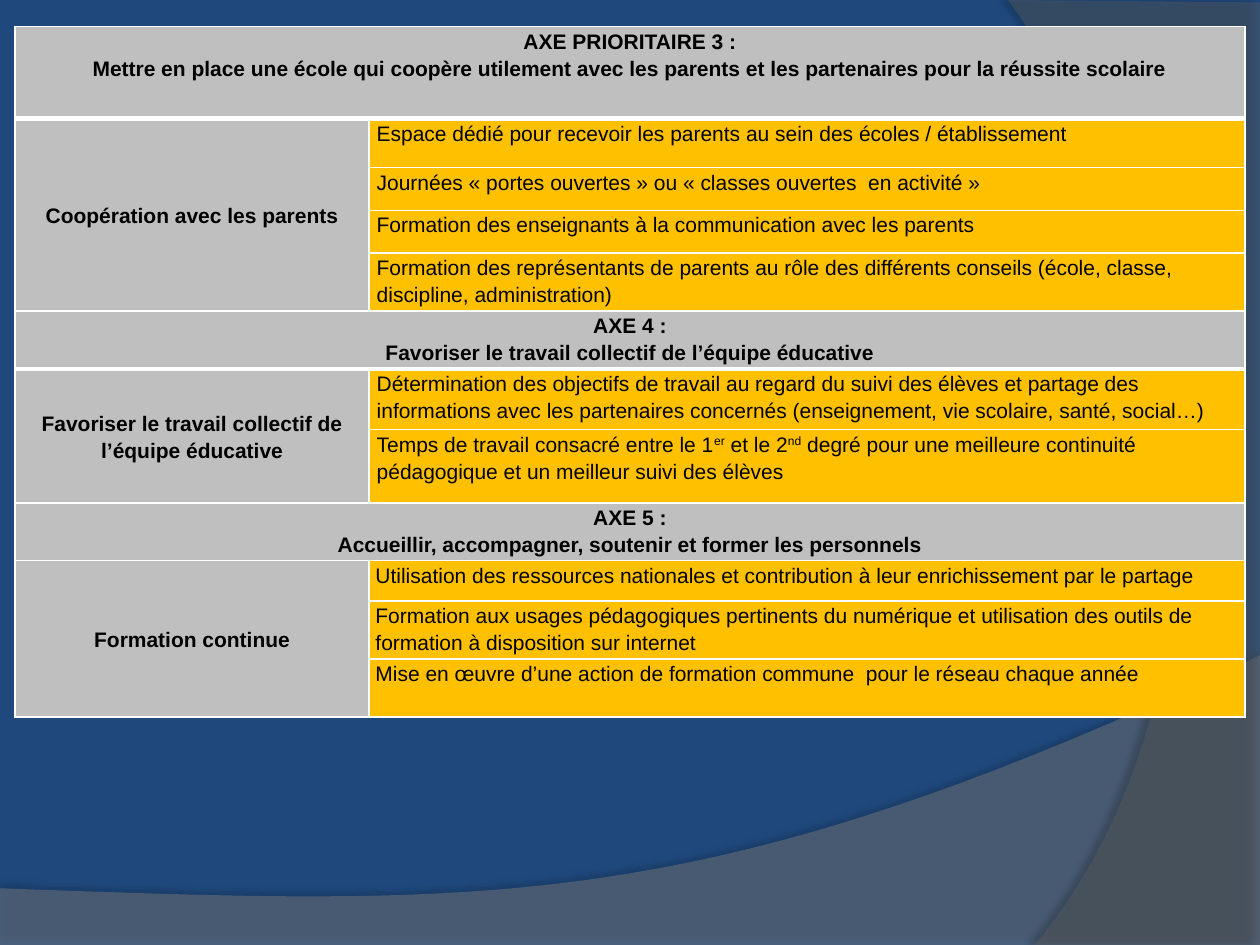
"""Slide with three action-plan tables over a blue background with two curved bands."""
from lxml.etree import SubElement
from pptx import Presentation
from pptx.dml.color import RGBColor
from pptx.enum.text import MSO_ANCHOR as Anchor, PP_ALIGN as Align
from pptx.oxml.ns import qn
from pptx.util import Inches, Pt

COLORS = {"background": "1F497D", "wave": "7F7F7F", "side": "5E5E5E", "heading": "BFBFBF",
          "action": "FFC000", "border": "FFFFFF", "text": "000000"}
CURVE_STEPS = 40

BANDS = [
    {"before": [(0, 7.05), (0, 7.51), (10, 7.51)],
     "curve": [(10, 5.2), (5.59, 7.29), (3.91, 7.19), (0, 7.05)],
     "color": "wave", "alpha": 45, "shadow": (35, 4, 3.5, 270)},
    {"before": [(10, 0.02), (10, 7.5)],
     "curve": [(8.21, 7.5), (9.35, 6.19), (10.18, 3), (8, 0)],
     "color": "side", "alpha": 40, "shadow": (45, 4, 4, 180)},
]

TABLES = [
    {"top": 0.21, "rows": [0.73, 0.39, 0.34, 0.34, 0.46], "inset": 0.06, "rule": 3,
     "title": "AXE PRIORITAIRE 3 :\nMettre en place une école qui coopère utilement avec les parents "
              "et les partenaires pour la réussite scolaire",
     "topic": "Coopération avec les parents",
     "actions": [
         "Espace dédié pour recevoir les parents au sein des écoles / établissement",
         "Journées « portes ouvertes » ou « classes ouvertes  en activité »",
         "Formation des enseignants à la communication avec les parents",
         "Formation des représentants de parents au rôle des différents conseils "
         "(école, classe, discipline, administration)"]},
    {"top": 2.47, "rows": [0.46, 0.48, 0.58], "inset": 0.06, "rule": 3,
     "title": "AXE 4 :\nFavoriser le travail collectif de l’équipe éducative",
     "topic": "Favoriser le travail collectif de l’équipe éducative",
     "actions": [
         "Détermination des objectifs de travail au regard du suivi des élèves et partage des "
         "informations avec les partenaires concernés (enseignement, vie scolaire, santé, social…)",
         "Temps de travail consacré entre le 1^er^ et le 2^nd^ degré pour une meilleure "
         "continuité pédagogique et un meilleur suivi des élèves"]},
    {"top": 3.99, "rows": [0.46, 0.32, 0.46, 0.46], "inset": 0.05, "rule": 1,
     "title": "AXE 5 :\nAccueillir, accompagner, soutenir et former les personnels",
     "topic": "Formation continue",
     "actions": [
         "Utilisation des ressources nationales et contribution à leur enrichissement par le partage",
         "Formation aux usages pédagogiques pertinents du numérique et utilisation des outils de "
         "formation à disposition sur internet",
         "Mise en œuvre d’une action de formation commune  pour le réseau chaque année"]},
]


def add_color(parent, name, alpha=100):
    color = SubElement(parent, qn("a:srgbClr"), val=COLORS[name])
    if alpha < 100:
        SubElement(color, qn("a:alpha"), val=str(alpha * 1000))


def fill_cell(cell, text, heading):
    cell.fill.solid()
    cell.fill.fore_color.rgb = RGBColor.from_string(COLORS["heading" if heading else "action"])
    for index, line in enumerate(text.split("\n")):
        frame = cell.text_frame
        para = frame.add_paragraph() if index else frame.paragraphs[0]
        para.alignment = Align.CENTER if heading else Align.LEFT
        para.line_spacing = 1.15
        for part, piece in enumerate(line.split("^")):
            span = para.add_run()
            span.text = piece
            span.font.name = "Arial"
            span.font.size = Pt(12)
            span.font.bold = heading
            span.font.color.rgb = RGBColor.from_string(COLORS["text"])
            if part % 2:
                span.font._element.set("baseline", "30000")


deck = Presentation()
deck.slide_width, deck.slide_height = Inches(10), Inches(7.5)
page = deck.slides.add_slide(deck.slide_layouts[6])
page.background.fill.solid()
page.background.fill.fore_color.rgb = RGBColor.from_string(COLORS["background"])

for band in BANDS:
    points = list(band["before"])
    for step in range(CURVE_STEPS + 1):
        t = step / CURVE_STEPS
        weights = [(1 - t) ** 3, 3 * t * (1 - t) ** 2, 3 * t * t * (1 - t), t ** 3]
        points.append([sum(w * p[axis] for w, p in zip(weights, band["curve"])) for axis in (0, 1)])
    outline = [(Inches(x), Inches(y)) for x, y in points]
    builder = page.shapes.build_freeform(*outline[0])
    builder.add_line_segments(outline[1:], close=True)
    shape = builder.convert_to_shape()
    shape.line.fill.background()
    shape.fill.solid()
    shape.fill.fore_color.rgb = RGBColor.from_string(COLORS[band["color"]])
    fill_color = shape._element.spPr.find(qn("a:solidFill"))[0]
    SubElement(fill_color, qn("a:alpha"), val=str(band["alpha"] * 1000))
    shape.shadow.inherit = False
    alpha, blur, distance, angle = band["shadow"]
    effects = shape._element.spPr.find(qn("a:effectLst"))
    shadow = SubElement(effects, qn("a:outerShdw"), blurRad=str(Pt(blur)), dist=str(Pt(distance)),
                        dir=str(angle * 60000), rotWithShape="0")
    add_color(shadow, "text", alpha)

for plan in TABLES:
    heights = plan["rows"]
    table = page.shapes.add_table(len(heights), 2, Inches(0.12), Inches(plan["top"]),
                                  Inches(9.76), Inches(sum(heights))).table
    table.first_row = table.horz_banding = False
    for column, width in zip(table.columns, (2.81, 6.95)):
        column.width = Inches(width)
    for index, (row, height) in enumerate(zip(table.rows, heights)):
        row.height = Inches(height)
        for cell in row.cells:
            cell.margin_left = cell.margin_right = Inches(plan["inset"])
            cell.margin_top = cell.margin_bottom = 0
            for side in ("lnL", "lnR", "lnT", "lnB"):
                under_title = (index, side) in ((0, "lnB"), (1, "lnT"))
                line = SubElement(cell._tc.get_or_add_tcPr(), qn("a:" + side),
                                  w=str(Pt(plan["rule"] if under_title else 1)))
                add_color(SubElement(line, qn("a:solidFill")), "border")
    title, topic = table.cell(0, 0), table.cell(1, 0)
    title.merge(table.cell(0, 1))
    topic.merge(table.cell(len(heights) - 1, 0))
    topic.vertical_anchor = Anchor.MIDDLE
    fill_cell(title, plan["title"], True)
    fill_cell(topic, plan["topic"], True)
    for index, action in enumerate(plan["actions"], 1):
        fill_cell(table.cell(index, 1), action, False)

deck.save("out.pptx")
